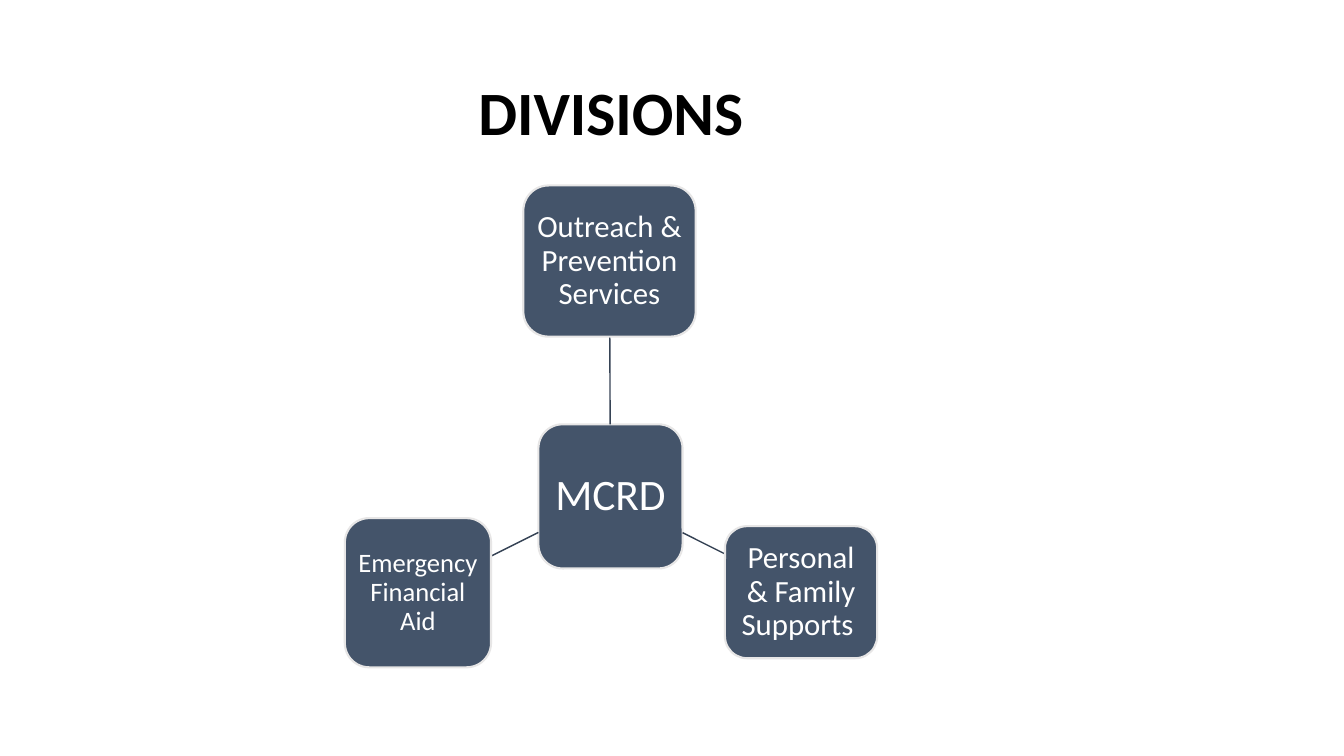
from lxml.etree import SubElement
from pptx import Presentation
from pptx.dml.color import RGBColor
from pptx.enum.shapes import MSO_CONNECTOR, MSO_SHAPE
from pptx.enum.text import MSO_ANCHOR, MSO_AUTO_SIZE, PP_ALIGN
from pptx.oxml.ns import qn
from pptx.util import Emu, Pt

EMU_PER_PX = 9144
COLOURS = {
    "background": "FFFFFF",
    "title": "000000",
    "node": "44546A",
    "border": "E7E6E6",
    "label": "FFFFFF",
    "spoke": "364355",
}
HUB = ("MCRD", (534, 421, 143, 143), 31, 9)
DIVISIONS = [
    ("Outreach & Prevention Services", (519, 184, 171, 150), 22, 6),
    ("Personal & Family Supports ", (719, 522, 151, 131), 22, 6),
    ("Emergency Financial Aid", (342, 514, 145, 148), 19, 5),
]


def px(length):
    """Turn a length in px into EMU."""
    return Emu(round(length * EMU_PER_PX))


def colour(name):
    """Look up a named colour."""
    return RGBColor.from_string(COLOURS[name])


def write(frame, text, size, ink, bold=False, inset=None):
    """Write centred text into a frame."""
    frame.word_wrap = True
    frame.auto_size = MSO_AUTO_SIZE.NONE
    frame.vertical_anchor = MSO_ANCHOR.MIDDLE
    if inset is not None:
        frame.margin_left = frame.margin_right = px(inset)
        frame.margin_top = frame.margin_bottom = px(inset)
    paragraph = frame.paragraphs[0]
    paragraph.alignment = PP_ALIGN.CENTER
    paragraph.line_spacing = 0.9
    run = paragraph.add_run()
    run.text = text
    run.font.name = "Calibri"
    run.font.size = Pt(size)
    run.font.bold = bold
    run.font.color.rgb = colour(ink)


def add_title(slide, box, text):
    """Place the slide title in its box."""
    title = slide.shapes.title
    title.left, title.top, title.width, title.height = map(px, box)
    write(title.text_frame, text, 44, "title", bold=True)


def add_node(slide, label, box, size, inset):
    """Draw one rounded node with its label."""
    node = slide.shapes.add_shape(MSO_SHAPE.ROUNDED_RECTANGLE, *map(px, box))
    node.shadow.inherit = False
    node.fill.solid()
    node.fill.fore_color.rgb = colour("node")
    node.line.color.rgb = colour("border")
    node.line.width = Pt(1.5)
    write(node.text_frame, label, size, "label", inset=inset)


def centre(box):
    """Find the middle of a box."""
    left, top, width, height = box
    return left + width / 2, top + height / 2


def edge_point(box, target):
    """Find where the line from the middle of a box to a target leaves the box."""
    x, y = centre(box)
    dx, dy = target[0] - x, target[1] - y
    share = 1 / max(abs(dx) / (box[2] / 2), abs(dy) / (box[3] / 2))
    return x + dx * share, y + dy * share


def add_spoke(slide, hub_box, division_box):
    """Join the hub and a division from edge to edge."""
    start = edge_point(hub_box, centre(division_box))
    end = edge_point(division_box, centre(hub_box))
    spoke = slide.shapes.add_connector(MSO_CONNECTOR.STRAIGHT, *map(px, start + end))
    spoke.line.color.rgb = colour("spoke")
    spoke.line.width = Pt(1)
    SubElement(spoke.element.spPr, qn("a:effectLst"))


def add_diagram(slide, hub, divisions):
    """Draw the hub with its surrounding divisions."""
    add_node(slide, *hub)
    for division in divisions:
        add_spoke(slide, hub[1], division[1])
        add_node(slide, *division)


def main():
    """Build and save the slide."""
    presentation = Presentation()
    presentation.slide_width, presentation.slide_height = px(1333), px(750)
    slide = presentation.slides.add_slide(presentation.slide_layouts[5])
    slide.background.fill.solid()
    slide.background.fill.fore_color.rgb = colour("background")
    add_title(slide, (31, 42, 1150, 145), "DIVISIONS")
    add_diagram(slide, HUB, DIVISIONS)
    presentation.save("out.pptx")


if __name__ == "__main__":
    main()
